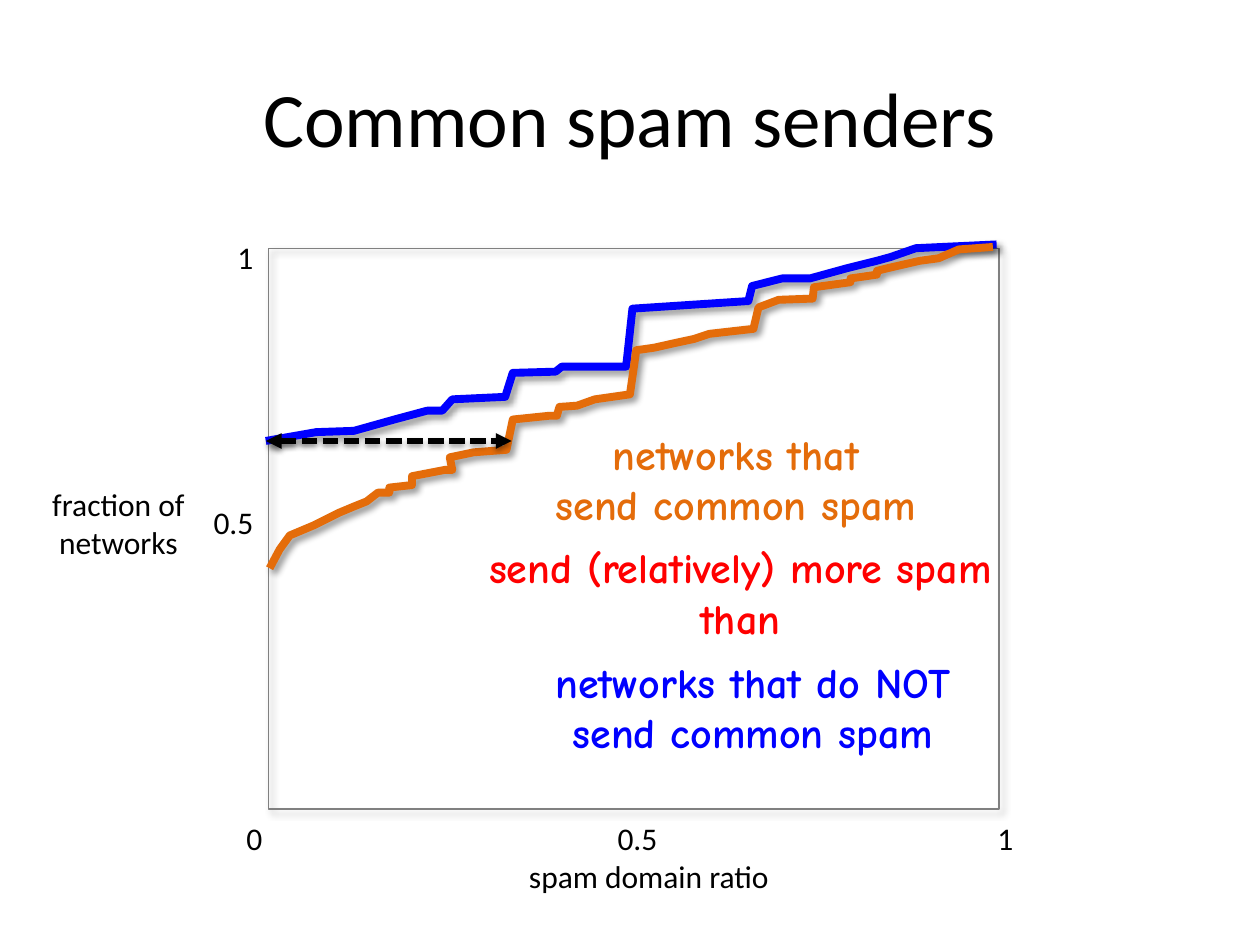
from dataclasses import dataclass
from typing import NamedTuple

from lxml.etree import SubElement
from pptx import Presentation
from pptx.dml.color import RGBColor
from pptx.enum.dml import MSO_LINE
from pptx.enum.shapes import MSO_CONNECTOR, MSO_SHAPE
from pptx.enum.text import MSO_ANCHOR, PP_ALIGN
from pptx.oxml.ns import qn
from pptx.util import Emu, Pt

PX = 9144  # EMU in one px, 100 px to the inch


@dataclass(frozen=True)
class Theme:
    black: str = "000000"
    frame: str = "808080"
    blue: str = "0000FF"
    orange: str = "E46C0A"
    red: str = "FF0000"
    body_font: str = "Calibri"
    note_font: str = "Comic Neue"
    title_size: int = 44
    label_size: int = 18
    note_size: int = 24


class Box(NamedTuple):
    left: int
    top: int
    width: int
    height: int

    def emu(self) -> list[Emu]:
        return [Emu(length * PX) for length in self]


class Label(NamedTuple):
    lines: list[str]
    box: Box
    align: PP_ALIGN = PP_ALIGN.CENTER


class Note(NamedTuple):
    lines: list[str]
    box: Box
    color: str


class Curve(NamedTuple):
    color: str
    points: list[tuple[int, int]]


class Shadow(NamedTuple):
    alpha: int
    blur: float
    distance: float
    angle: int


THEME = Theme()
SOFT_SHADOW = Shadow(40, 4, 3, 45)
ARROW_SHADOW = Shadow(38, 3.1, 1.6, 90)

TITLE_BOX = Box(50, 30, 900, 125)
PLOT = Box(213, 197, 580, 445)

LABELS = [
    Label(["1"], Box(115, 184, 96, 38), PP_ALIGN.RIGHT),
    Label(["0.5"], Box(115, 394, 96, 38), PP_ALIGN.RIGHT),
    Label(["0"], Box(162, 645, 80, 38)),
    Label(["0.5"], Box(466, 645, 80, 38)),
    Label(["1"], Box(758, 645, 80, 38)),
    Label(["spam domain ratio"], Box(390, 675, 250, 38)),
    Label(["fraction of", "networks"], Box(30, 380, 128, 71)),
]

NOTES = [
    Note(["networks that", "send common spam"], Box(423, 335, 322, 91), THEME.orange),
    Note(["networks that do NOT", "send common spam"], Box(407, 516, 381, 91), THEME.blue),
    Note(["send (relatively) more spam", "than"], Box(358, 425, 459, 91), THEME.red),
]

CURVES = [
    Curve(THEME.blue, [
        (211, 350), (251, 343), (281, 342), (313, 333), (339, 326), (351, 326),
        (359, 317), (401, 315), (407, 296), (441, 295), (446, 291), (497, 291),
        (502, 245), (594, 239), (597, 227), (621, 221), (643, 221), (672, 213),
        (696, 207), (707, 204), (727, 197), (791, 194),
    ]),
    Curve(THEME.orange, [
        (214, 451), (222, 436), (230, 425), (249, 417), (269, 407), (281, 402),
        (291, 398), (300, 391), (309, 391), (309, 387), (327, 385), (327, 378),
        (353, 373), (359, 373), (357, 363), (376, 359), (402, 357), (407, 333),
        (436, 330), (442, 330), (444, 323), (458, 322), (472, 317), (500, 313),
        (505, 278), (519, 276), (537, 272), (551, 269), (563, 265), (598, 261),
        (602, 244), (618, 238), (645, 237), (646, 228), (675, 224), (675, 221),
        (696, 218), (696, 215), (704, 213), (730, 207), (745, 205), (761, 198),
        (788, 196),
    ]),
]

GAP_START, GAP_END = (211, 350), (406, 350)


def style_line(shape, color: str, width: float) -> None:
    shape.line.color.rgb = RGBColor.from_string(color)
    shape.line.width = Pt(width)


def add_shadow(shape, shadow: Shadow) -> None:
    """Append the effect list; the line must already be set, as it comes first."""
    effects = SubElement(shape._element.spPr, qn("a:effectLst"))
    outer = SubElement(
        effects, qn("a:outerShdw"), blurRad=str(Pt(shadow.blur)),
        dist=str(Pt(shadow.distance)), dir=str(shadow.angle * 60000), rotWithShape="0",
    )
    color = SubElement(outer, qn("a:srgbClr"), val=THEME.black)
    SubElement(color, qn("a:alpha"), val=str(shadow.alpha * 1000))


def write_lines(frame, lines: list[str], font: str, size: int, color: str,
                align: PP_ALIGN = PP_ALIGN.CENTER, bold: bool = False) -> None:
    for index, line in enumerate(lines):
        paragraph = frame.add_paragraph() if index else frame.paragraphs[0]
        paragraph.alignment = align
        run = paragraph.add_run()
        run.text = line
        run.font.name = font
        run.font.size = Pt(size)
        run.font.bold = bold
        run.font.color.rgb = RGBColor.from_string(color)


def add_title(slide, text: str) -> None:
    title = slide.shapes.title
    title.left, title.top, title.width, title.height = TITLE_BOX.emu()
    title.text_frame.vertical_anchor = MSO_ANCHOR.MIDDLE
    write_lines(title.text_frame, [text], THEME.body_font, THEME.title_size, THEME.black)


def add_plot_frame(slide) -> None:
    frame = slide.shapes.add_shape(MSO_SHAPE.RECTANGLE, *PLOT.emu())
    frame.fill.background()
    style_line(frame, THEME.frame, 0.75)
    add_shadow(frame, SOFT_SHADOW)


def add_curve(slide, curve: Curve) -> None:
    start, *rest = curve.points
    builder = slide.shapes.build_freeform(*start, scale=PX)
    builder.add_line_segments(rest, close=False)
    outline = builder.convert_to_shape()
    outline.fill.background()
    style_line(outline, curve.color, 4.5)
    add_shadow(outline, SOFT_SHADOW)


def add_label(slide, label: Label) -> None:
    frame = slide.shapes.add_textbox(*label.box.emu()).text_frame
    frame.word_wrap = True
    write_lines(frame, label.lines, THEME.body_font, THEME.label_size, THEME.black, label.align)


def add_note(slide, note: Note) -> None:
    frame = slide.shapes.add_textbox(*note.box.emu()).text_frame
    frame.word_wrap = False
    write_lines(frame, note.lines, THEME.note_font, THEME.note_size, note.color, bold=True)


def add_gap_arrow(slide) -> None:
    ends = [Emu(length * PX) for length in GAP_START + GAP_END]
    arrow = slide.shapes.add_connector(MSO_CONNECTOR.STRAIGHT, *ends)
    style_line(arrow, THEME.black, 3)
    arrow.line.dash_style = MSO_LINE.SQUARE_DOT
    for end in ("a:headEnd", "a:tailEnd"):
        SubElement(arrow.line._get_or_add_ln(), qn(end), type="triangle")
    add_shadow(arrow, ARROW_SHADOW)


def main() -> None:
    deck = Presentation()
    deck.slide_width, deck.slide_height = Emu(1000 * PX), Emu(750 * PX)
    slide = deck.slides.add_slide(deck.slide_layouts[5])
    add_title(slide, "Common spam senders")
    add_plot_frame(slide)
    for curve in CURVES:
        add_curve(slide, curve)
    for label in LABELS:
        add_label(slide, label)
    for note in NOTES:
        add_note(slide, note)
    add_gap_arrow(slide)
    deck.save("out.pptx")


if __name__ == "__main__":
    main()
